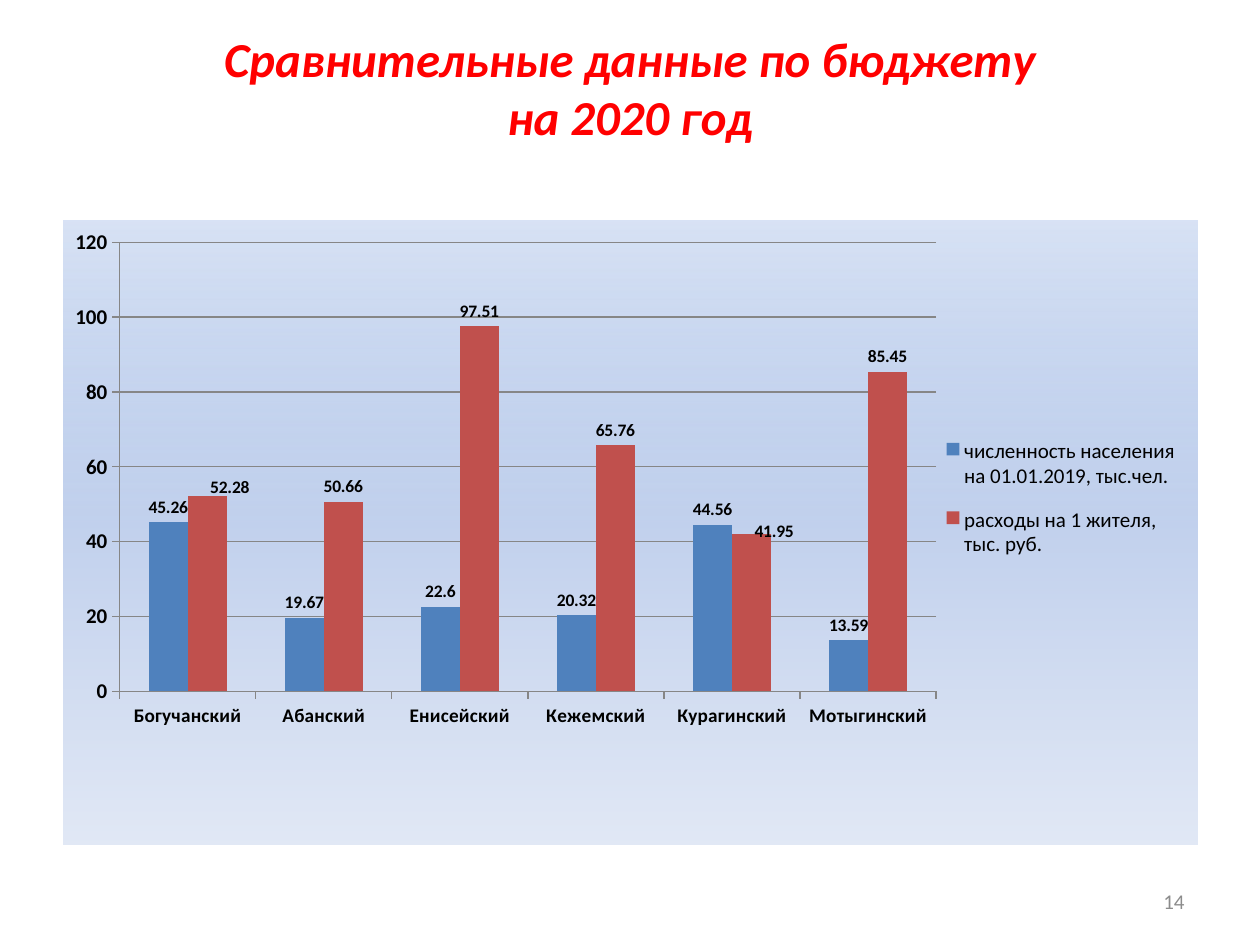
import pptx
import pptx.chart.data
import pptx.dml.color
import pptx.enum.chart
import pptx.enum.text
import pptx.oxml
import pptx.oxml.ns
import pptx.util
from pptx.util import Inches

RED = pptx.dml.color.RGBColor(0xFF, 0x00, 0x00)
BLACK = pptx.dml.color.RGBColor(0x00, 0x00, 0x00)
GREY = pptx.dml.color.RGBColor(0x8C, 0x8C, 0x8C)
LINE_GREY = pptx.dml.color.RGBColor(0x86, 0x86, 0x86)
BLUE = pptx.dml.color.RGBColor(0x4F, 0x81, 0xBD)
BRICK = pptx.dml.color.RGBColor(0xC0, 0x50, 0x4D)
FONT = "Calibri"

DISTRICTS = ["Богучанский", "Абанский", "Енисейский", "Кежемский", "Курагинский", "Мотыгинский"]
SERIES = [
    ("численность населения на 01.01.2019, тыс.чел.", BLUE, "General",
     [45.26, 19.67, 22.6, 20.32, 44.56, 13.59]),
    ("расходы на 1 жителя, тыс. руб.", BRICK, "0.00",
     [52.28, 50.66, 97.51, 65.76, 41.95, 85.45]),
]
# Shifts of the labels of the second series, as fractions of the chart
LABEL_SHIFTS = {0: (0.02, 0.01), 4: (0.02, 0.02)}
# Position in percent, colour, opacity in percent
BACKGROUND_STOPS = [(0, "9AB5E4", 38), (50, "C2D1ED", 100), (100, "E1E8F5", 100)]


def format_font(font, size, color=BLACK, bold=False, italic=False):
    font.name = FONT
    font.size = pptx.util.Pt(size)
    font.color.rgb = color
    font.bold = bold
    font.italic = italic


def write_text(frame, text, align, **font_format):
    frame.word_wrap = True
    frame.auto_size = pptx.enum.text.MSO_AUTO_SIZE.NONE
    frame.vertical_anchor = pptx.enum.text.MSO_ANCHOR.MIDDLE
    para = frame.paragraphs[0]
    para.alignment = align
    for index, line in enumerate(text.split("\n")):
        if index:
            para.add_line_break()
        span = para.add_run()
        span.text = line
        format_font(span.font, **font_format)


def set_layout(parent, position, **settings):
    """Give a chart part a manual layout as its child number position."""
    for old in parent.findall(pptx.oxml.ns.qn("c:layout")):
        parent.remove(old)
    values = "".join(f'<c:{name} val="{value}"/>' for name, value in settings.items())
    parent.insert(position, pptx.oxml.parse_xml(
        f'<c:layout {pptx.oxml.ns.nsdecls("c")}>'
        f"<c:manualLayout>{values}</c:manualLayout></c:layout>"))


def fill_chart_background(chart):
    stops = "".join(
        f'<a:gs pos="{place * 1000}"><a:srgbClr val="{color}">'
        f'<a:alpha val="{opacity * 1000}"/></a:srgbClr></a:gs>'
        for place, color, opacity in BACKGROUND_STOPS)
    area = pptx.oxml.parse_xml(
        f'<c:spPr {pptx.oxml.ns.nsdecls("c", "a")}><a:gradFill><a:gsLst>{stops}</a:gsLst>'
        '<a:lin ang="5400000" scaled="0"/></a:gradFill><a:ln><a:noFill/></a:ln></c:spPr>')
    chart.element.find(pptx.oxml.ns.qn("c:chart")).addnext(area)


def format_axis(axis, size):
    format_font(axis.tick_labels.font, size, bold=True)
    axis.major_tick_mark = pptx.enum.chart.XL_TICK_MARK.OUTSIDE
    axis.minor_tick_mark = pptx.enum.chart.XL_TICK_MARK.NONE
    axis.format.line.color.rgb = LINE_GREY


def format_series(series, color, number_format):
    series.format.fill.solid()
    series.format.fill.fore_color.rgb = color
    series.invert_if_negative = False
    labels = series.data_labels
    labels.show_value = True
    labels.number_format = number_format
    labels.number_format_is_linked = False
    labels.position = pptx.enum.chart.XL_LABEL_POSITION.OUTSIDE_END
    format_font(labels.font, 10, bold=True)


def shift_label(series, index, x, y):
    label = series.points[index].data_label
    format_font(label.font, 10, bold=True)
    label.position = pptx.enum.chart.XL_LABEL_POSITION.OUTSIDE_END
    for element in series.data_labels._element.findall(pptx.oxml.ns.qn("c:dLbl")):
        if element.find(pptx.oxml.ns.qn("c:idx")).get("val") == str(index):
            set_layout(element, 1, x=x, y=y)


def add_budget_chart(page, left, top, width, height):
    data = pptx.chart.data.CategoryChartData()
    data.categories = DISTRICTS
    for name, _, _, values in SERIES:
        data.add_series(name, values)
    chart = page.shapes.add_chart(
        pptx.enum.chart.XL_CHART_TYPE.COLUMN_CLUSTERED, left, top, width, height, data).chart
    chart.has_title = False
    format_font(chart.font, 18)
    fill_chart_background(chart)

    plot = chart.plots[0]
    plot.gap_width = 150
    plot.vary_by_categories = False
    for series, (_, color, number_format, _) in zip(plot.series, SERIES):
        format_series(series, color, number_format)
    for index, (x, y) in LABEL_SHIFTS.items():
        shift_label(plot.series[1], index, x, y)

    format_axis(chart.category_axis, 11)
    format_axis(chart.value_axis, 12)
    chart.value_axis.minimum_scale = 0
    chart.value_axis.maximum_scale = 120
    chart.value_axis.major_unit = 20
    chart.value_axis.has_major_gridlines = True
    chart.value_axis.major_gridlines.format.line.color.rgb = LINE_GREY

    chart.has_legend = True
    chart.legend.position = pptx.enum.chart.XL_LEGEND_POSITION.RIGHT
    chart.legend.include_in_layout = False
    format_font(chart.legend.font, 12)
    set_layout(chart.legend._element, 1, xMode="edge", yMode="edge", x=0.77, y=0.32, w=0.22, h=0.25)
    plot_area = chart.element.find(".//" + pptx.oxml.ns.qn("c:plotArea"))
    set_layout(plot_area, 0, layoutTarget="inner", xMode="edge", yMode="edge",
               x=0.05, y=0.035, w=0.72, h=0.72)


def place_title(page, left, top, width, height):
    title = page.shapes.title
    title.left, title.top, title.width, title.height = left, top, width, height
    write_text(title.text_frame, "Сравнительные данные по бюджету\nна 2020 год",
               pptx.enum.text.PP_ALIGN.CENTER, size=27.9, color=RED, bold=True, italic=True)


def add_page_number(page, left, top, width, height):
    box = page.shapes.add_textbox(left, top, width, height)
    write_text(box.text_frame, "14", pptx.enum.text.PP_ALIGN.RIGHT, size=12, color=GREY)


def main():
    deck = pptx.Presentation()
    deck.slide_width, deck.slide_height = Inches(10), Inches(7.5)
    page = deck.slides.add_slide(deck.slide_layouts.get_by_name("Title Only"))
    place_title(page, Inches(0.5), Inches(0.22), Inches(9), Inches(0.94))
    add_budget_chart(page, Inches(0.5), Inches(1.75), Inches(9), Inches(4.95))
    add_page_number(page, Inches(7.17), Inches(6.95), Inches(2.33), Inches(0.4))
    deck.save("out.pptx")


if __name__ == "__main__":
    main()
